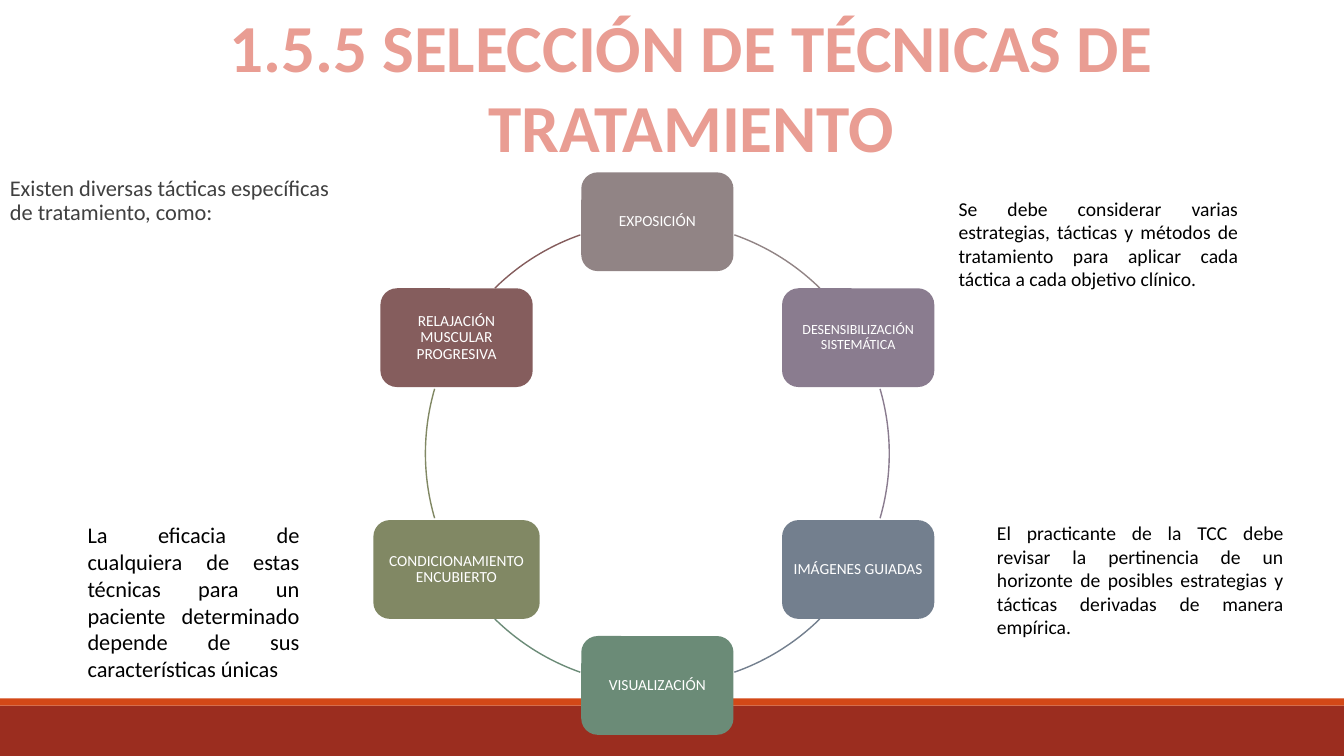
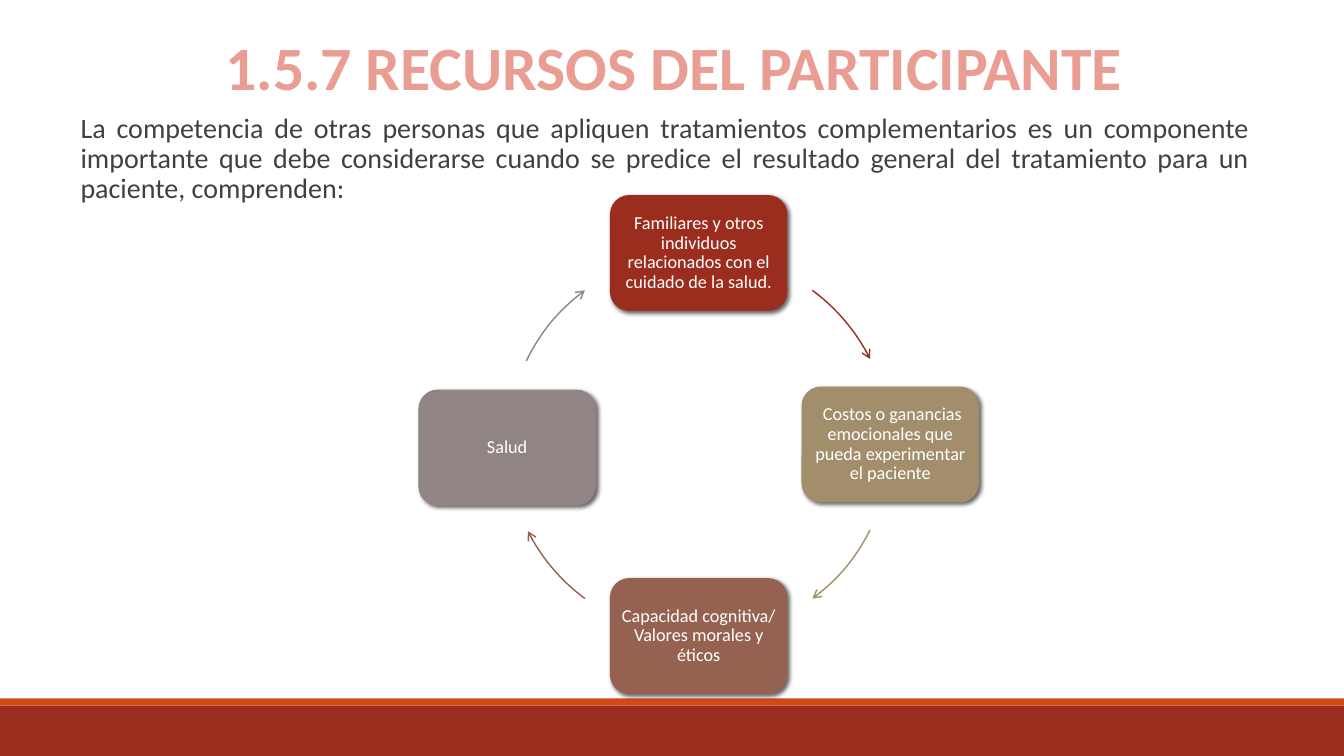
import math

import lxml.etree
import pptx
import pptx.dml.color
import pptx.enum.shapes
import pptx.enum.text
import pptx.oxml.ns
import pptx.util

RGBColor = pptx.dml.color.RGBColor
SHAPE = pptx.enum.shapes.MSO_SHAPE
ALIGN = pptx.enum.text.PP_ALIGN
ANCHOR = pptx.enum.text.MSO_ANCHOR
qn = pptx.oxml.ns.qn

PX = 9144  # one px is a hundredth of an inch
SLIDE_WIDTH, SLIDE_HEIGHT = 1333, 750
FONT = "Calibri"

WHITE = RGBColor(0xFF, 0xFF, 0xFF)
BLACK = RGBColor(0x00, 0x00, 0x00)
DARK_GRAY = RGBColor(0x40, 0x40, 0x40)
BRICK = RGBColor(0x9B, 0x2D, 0x1F)
ORANGE = RGBColor(0xD3, 0x48, 0x17)
SALMON = RGBColor(0xE9, 0x9D, 0x93)
TAUPE = RGBColor(0x91, 0x84, 0x85)
MAUVE = RGBColor(0x8A, 0x7C, 0x8F)
SLATE = RGBColor(0x73, 0x7F, 0x8E)
GREEN = RGBColor(0x6B, 0x8B, 0x77)
OLIVE = RGBColor(0x81, 0x88, 0x64)
PLUM = RGBColor(0x85, 0x5D, 0x5D)
SAND = RGBColor(0xA2, 0x8E, 0x6A)
COPPER = RGBColor(0x95, 0x62, 0x51)

# Text, colour, font size, box width, downward shift,
# then start and end of the arc that follows (degrees clockwise from the top)
TECHNIQUES = [
    ("EXPOSICIÓN", TAUPE, 11, 151, 0, 19.4, 44.5),
    ("DESENSIBILIZACIÓN SISTEMÁTICA", MAUVE, 10, 151, 0, 73.8, 106.2),
    ("IMÁGENES GUIADAS", SLATE, 11, 151, 0, 135.5, 160.6),
    ("VISUALIZACIÓN", GREEN, 11, 151, 0, 199.4, 224.5),
    ("CONDICIONAMIENTO ENCUBIERTO", OLIVE, 11, 165, 0, 253.8, 286.2),
    ("RELAJACIÓN MUSCULAR PROGRESIVA", PLUM, 11, 151, 0, 315.5, 340.6),
]
RESOURCES = [
    ("Familiares y otros individuos relacionados con el cuidado de la salud.",
     BRICK, 13, 176, 0, 36.4, 63.5),
    (" Costos o ganancias emocionales que pueda experimentar el paciente",
     SAND, 13, 176, 0, 116.5, 143.6),
    ("Capacidad cognitiva/ Valores morales y éticos",
     COPPER, 13, 176, 0, 216.4, 243.1),
    ("Salud", TAUPE, 13, 176, 3, 295.8, 323.6),
]


def px(length):
    return pptx.util.Emu(round(length * PX))


def write_text(shape, text, size=14, color=BLACK, bold=False, align=ALIGN.LEFT,
               anchor=ANCHOR.TOP, margins=(10, 5), spacing=None):
    frame = shape.text_frame
    frame.word_wrap = True
    frame.vertical_anchor = anchor
    frame.margin_left = frame.margin_right = px(margins[0])
    frame.margin_top = frame.margin_bottom = px(margins[1])
    paragraph = frame.paragraphs[0]
    paragraph.alignment = align
    paragraph.line_spacing = spacing
    run = paragraph.add_run()
    run.text = text
    run.font.name = FONT
    run.font.size = pptx.util.Pt(size)
    run.font.bold = bold
    run.font.color.rgb = color
    return run


def add_text(slide, box, text, **text_format):
    shape = slide.shapes.add_textbox(*map(px, box))
    return write_text(shape, text, **text_format)


def add_filled_shape(slide, kind, box, color):
    shape = slide.shapes.add_shape(kind, *map(px, box))
    shape.shadow.inherit = False
    shape.fill.solid()
    shape.fill.fore_color.rgb = color
    shape.line.fill.background()
    return shape


def add_title(slide, box, text, size):
    run = add_text(slide, box, text, size=size, color=SALMON, bold=True,
                   align=ALIGN.CENTER)
    # Letter outline, which must come first in the run properties
    outline = lxml.etree.Element(qn("a:ln"), w=str(pptx.util.Pt(1.75)))
    fill = lxml.etree.SubElement(outline, qn("a:solidFill"))
    lxml.etree.SubElement(fill, qn("a:srgbClr"), val=str(BRICK))
    run.font._element.insert(0, outline)


def add_shadow(shape):
    effects = shape._element.spPr.find(qn("a:effectLst"))
    shadow = lxml.etree.SubElement(
        effects, qn("a:outerShdw"), blurRad=str(pptx.util.Pt(3)),
        dist=str(pptx.util.Pt(2)), dir=str(45 * 60000), rotWithShape="0")
    color = lxml.etree.SubElement(shadow, qn("a:srgbClr"), val=str(BLACK))
    lxml.etree.SubElement(color, qn("a:alpha"), val="60000")


def add_arc(slide, center, radius, start, end, color, arrow):
    box = (center[0] - radius, center[1] - radius, 2 * radius, 2 * radius)
    arc = slide.shapes.add_shape(SHAPE.ARC, *map(px, box))
    arc.shadow.inherit = False
    arc.fill.background()
    arc.line.color.rgb = color
    arc.line.width = pptx.util.Pt(1)
    for index, angle in enumerate((start, end)):
        # Preset angles start at three o'clock, in 60000ths of a degree
        arc.adjustments[index] = (angle - 90) % 360 * 60000 / 100000
    if arrow:
        line = arc._element.spPr.find(qn("a:ln"))
        lxml.etree.SubElement(line, qn("a:tailEnd"), type="arrow")


def add_cycle(slide, nodes, center, radius, height, raised=False):
    """Boxes evenly spaced on a circle, joined by arcs."""
    for index, (text, color, size, width, shift, start, end) in enumerate(nodes):
        angle = math.radians(360 * index / len(nodes))
        middle_x = center[0] + radius * math.sin(angle)
        middle_y = center[1] - radius * math.cos(angle) + shift
        box = (middle_x - width / 2, middle_y - height / 2, width, height)
        node = add_filled_shape(slide, SHAPE.ROUNDED_RECTANGLE, box, color)
        if raised:
            add_shadow(node)
        write_text(node, text, size=size, color=WHITE, align=ALIGN.CENTER,
                   anchor=ANCHOR.MIDDLE, margins=(5, 5), spacing=0.9)
        add_arc(slide, center, radius, start, end, color, arrow=raised)


def add_slide(presentation):
    """Blank slide with the two footer bands."""
    slide = presentation.slides.add_slide(presentation.slide_layouts[6])
    for top, height, color in ((700, 50, BRICK), (693, 7, ORANGE)):
        add_filled_shape(slide, SHAPE.RECTANGLE, (0, top, SLIDE_WIDTH, height), color)
    return slide


def build_techniques(presentation):
    slide = add_slide(presentation)
    add_text(slide, (0, 171, 354, 97),
             "Existen diversas tácticas específicas de tratamiento, como:",
             size=16, color=DARK_GRAY, spacing=0.9)
    add_cycle(slide, TECHNIQUES, center=(652, 450), radius=230, height=98)
    add_title(slide, (77, 0, 1217, 172),
              "1.5.5 SELECCIÓN DE TÉCNICAS DE TRATAMIENTO", 48)
    # Remarks around the cycle
    remarks = [
        ((979, 512, 304, 128), 14,
         "El practicante de la TCC debe revisar la pertinencia de un horizonte de "
         "posibles estrategias y tácticas derivadas de manera empírica."),
        ((941, 190, 297, 104), 14,
         "Se debe considerar varias estrategias, tácticas y métodos de tratamiento "
         "para aplicar cada táctica a cada objetivo clínico."),
        ((77, 512, 230, 172), 16,
         "La eficacia de cualquiera de estas técnicas para un paciente determinado "
         "depende de sus características únicas"),
    ]
    for box, size, text in remarks:
        add_text(slide, box, text, size=size, align=ALIGN.JUSTIFY)


def build_resources(presentation):
    slide = add_slide(presentation)
    add_text(slide, (70, 108, 1179, 129),
             "La competencia de otras personas que apliquen tratamientos "
             "complementarios es un componente importante que debe considerarse "
             "cuando se predice el resultado general del tratamiento para un "
             "paciente, comprenden:",
             size=20, color=DARK_GRAY, align=ALIGN.JUSTIFY, spacing=0.9)
    add_title(slide, (127, 24, 1084, 84), "1.5.7 RECURSOS DEL PARTICIPANTE", 44)
    add_cycle(slide, RESOURCES, center=(693, 441), radius=190, height=115,
              raised=True)


def main():
    presentation = pptx.Presentation()
    presentation.slide_width = px(SLIDE_WIDTH)
    presentation.slide_height = px(SLIDE_HEIGHT)
    build_techniques(presentation)
    build_resources(presentation)
    presentation.save("out.pptx")


if __name__ == "__main__":
    main()
